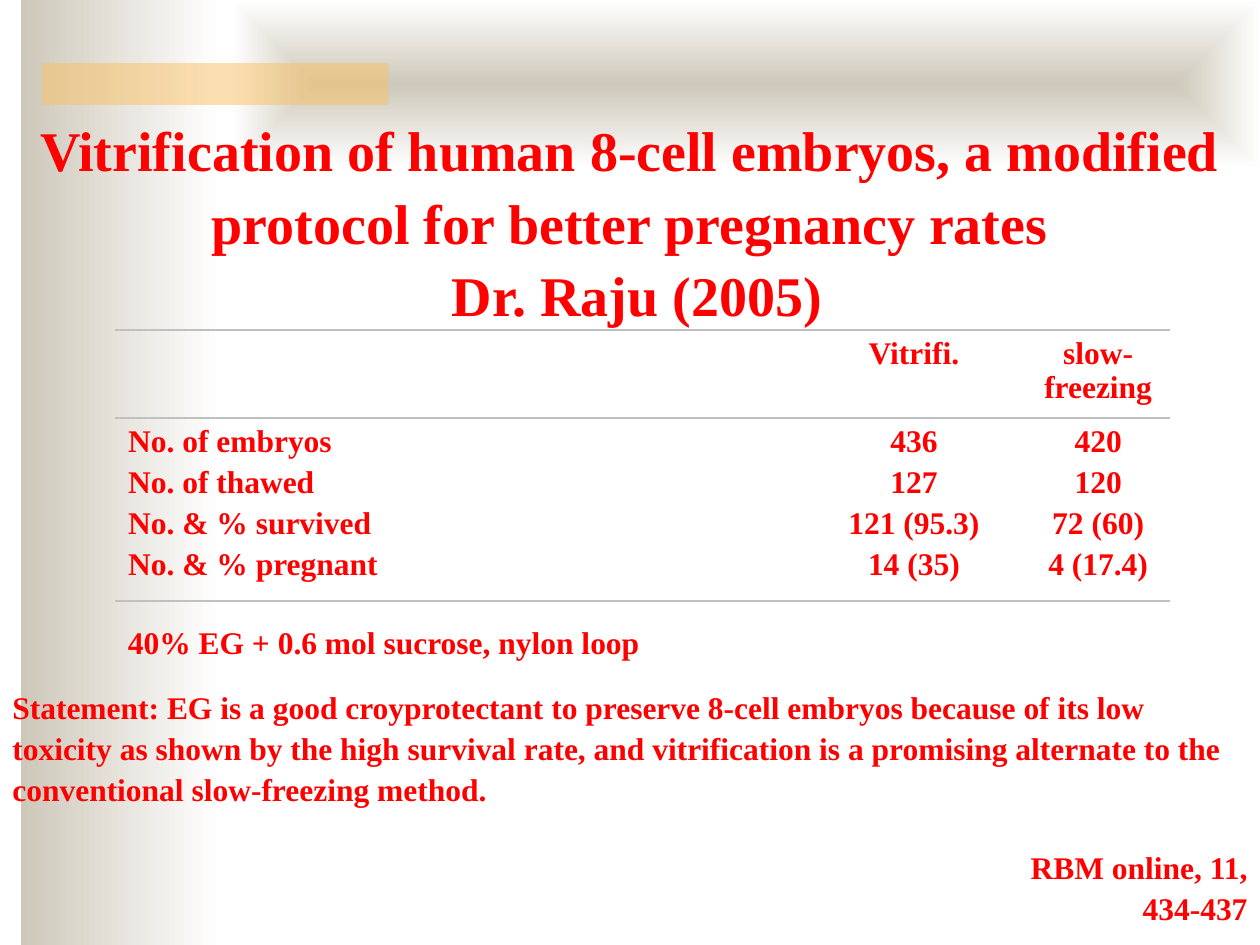
from lxml import etree
from pptx import Presentation
from pptx.dml.color import RGBColor as Rgb
from pptx.enum.shapes import MSO_SHAPE as Shape
from pptx.enum.text import MSO_ANCHOR as Anchor, PP_ALIGN as Align
from pptx.oxml import parse_xml
from pptx.oxml.ns import qn
from pptx.util import Inches, Pt

COLORS = {"text": "FF0000", "sand": "CEC8BA", "white": "FFFFFF",
          "bar": "FAC164", "rule": "C0C0C0"}
NS = 'xmlns:a="http://schemas.openxmlformats.org/drawingml/2006/main"'
CELL = Inches(1) / 12  # grid of 120 columns by 90 rows


def units(*vals):
    return [round(v * CELL) for v in vals]


class Page:
    font = "Times New Roman"

    def __init__(self, slide):
        self.slide = slide

    def rect(self, *box):
        shape = self.slide.shapes.add_shape(Shape.RECTANGLE, *units(*box))
        shape.shadow.inherit = False
        shape.line.fill.background()
        return shape

    def fade(self, *box, inward=False):
        shape = self.rect(*box)
        fill = shape.fill
        fill.gradient()
        fill.gradient_angle = 0
        for stop, name in zip(fill.gradient_stops, ("sand", "white")):
            stop.color.rgb = Rgb.from_string(COLORS[name])
        if inward:
            lin = shape.element.spPr.find(".//" + qn("a:lin"))
            lin.getparent().replace(lin, parse_xml(
                f'<a:path {NS} path="shape"><a:fillToRect l="50000" t="50000"'
                ' r="50000" b="50000"/></a:path>'))

    def bar(self, *box, alpha):
        shape = self.rect(*box)
        shape.fill.solid()
        shape.fill.fore_color.rgb = Rgb.from_string(COLORS["bar"])
        color = shape.element.spPr.find(".//" + qn("a:srgbClr"))
        etree.SubElement(color, qn("a:alpha")).set("val", str(alpha * 1000))

    def style(self, frame, lines, size=18, align=Align.LEFT, gap=0, lead=None):
        frame.text = "\n".join(lines)
        for i, para in enumerate(frame.paragraphs):
            para.alignment = align
            para.line_spacing = lead
            if i and gap:
                para.space_before = Pt(gap)
            for run in para.runs:
                run.font.name, run.font.size, run.font.bold = self.font, Pt(size), True
                run.font.color.rgb = Rgb.from_string(COLORS["text"])

    def text(self, lines, *box, anchor=Anchor.TOP, **look):
        frame = self.slide.shapes.add_textbox(*units(*box)).text_frame
        frame.word_wrap = True
        frame.vertical_anchor = anchor
        self.style(frame, lines, lead=1.08, **look)
        return frame

    def edge(self, cell, side, shown):
        paint = (f'<a:solidFill><a:srgbClr val="{COLORS["rule"]}"/></a:solidFill>'
                 if shown else "<a:noFill/>")
        cell._tc.get_or_add_tcPr().append(parse_xml(
            f'<a:ln{side} {NS} w="{Pt(1.5)}">{paint}</a:ln{side}>'))

    def table(self, rows, left, top, widths, heights):
        box = units(left, top, sum(widths), sum(heights))
        table = self.slide.shapes.add_table(len(rows), len(widths), *box).table
        table.first_row = table.horz_banding = False
        for col, width in zip(table.columns, units(*widths)):
            col.width = width
        for row, height in zip(table.rows, units(*heights)):
            row.height = height
        for r, row in enumerate(rows):
            for c, lines in enumerate(row):
                cell = table.cell(r, c)
                self.style(cell.text_frame, lines, gap=3.6,
                           align=Align.CENTER if c else Align.LEFT)
                for side in "LRTB":
                    self.edge(cell, side, side in "TB")
                cell.fill.background()


def main():
    deck = Presentation()
    deck.slide_width, deck.slide_height = units(120, 90)
    page = Page(deck.slides.add_slide(deck.slide_layouts[6]))

    # Backdrop
    page.fade(2, 0, 19, 90)
    page.fade(22, 0, 98, 16, inward=True)
    page.bar(4, 6, 33, 4, alpha=50)

    # Title
    page.text(["Vitrification of human 8-cell embryos, a modified protocol "
               "for better pregnancy rates", " Dr. Raju (2005)"],
              0, 11.75, 120, 18.25, anchor=Anchor.MIDDLE, size=32, align=Align.CENTER)

    # Results
    page.table([
        [[], ["Vitrifi."], ["slow-freezing"]],
        [["No. of embryos", "No. of thawed", "No. & % survived", "No. & % pregnant"],
         ["436", "127", "121 (95.3)", "14 (35)"],
         ["420", "120", "72 (60)", "4 (17.4)"]],
    ], 11, 31.4, widths=[65.3, 21.5, 13.6], heights=[7.9, 16.3])
    page.text(["40% EG + 0.6 mol sucrose, nylon loop"],
              11, 59, 109, 4, anchor=Anchor.MIDDLE)

    # Statement and citation
    frame = page.text([
        "Statement: EG is a good croyprotectant to preserve 8-cell embryos because "
        "of its low toxicity as shown by the high survival rate, and vitrification "
        "is a promising alternate to the conventional slow-freezing method.",
        "RBM online, 11, 434-437"], 0, 64.7, 120, 23, gap=21.5)
    cite = frame.paragraphs[-1]
    cite.alignment = Align.RIGHT
    cite._p.get_or_add_pPr().set("marL", str(Inches(7.9)))

    deck.save("out.pptx")


if __name__ == "__main__":
    main()
